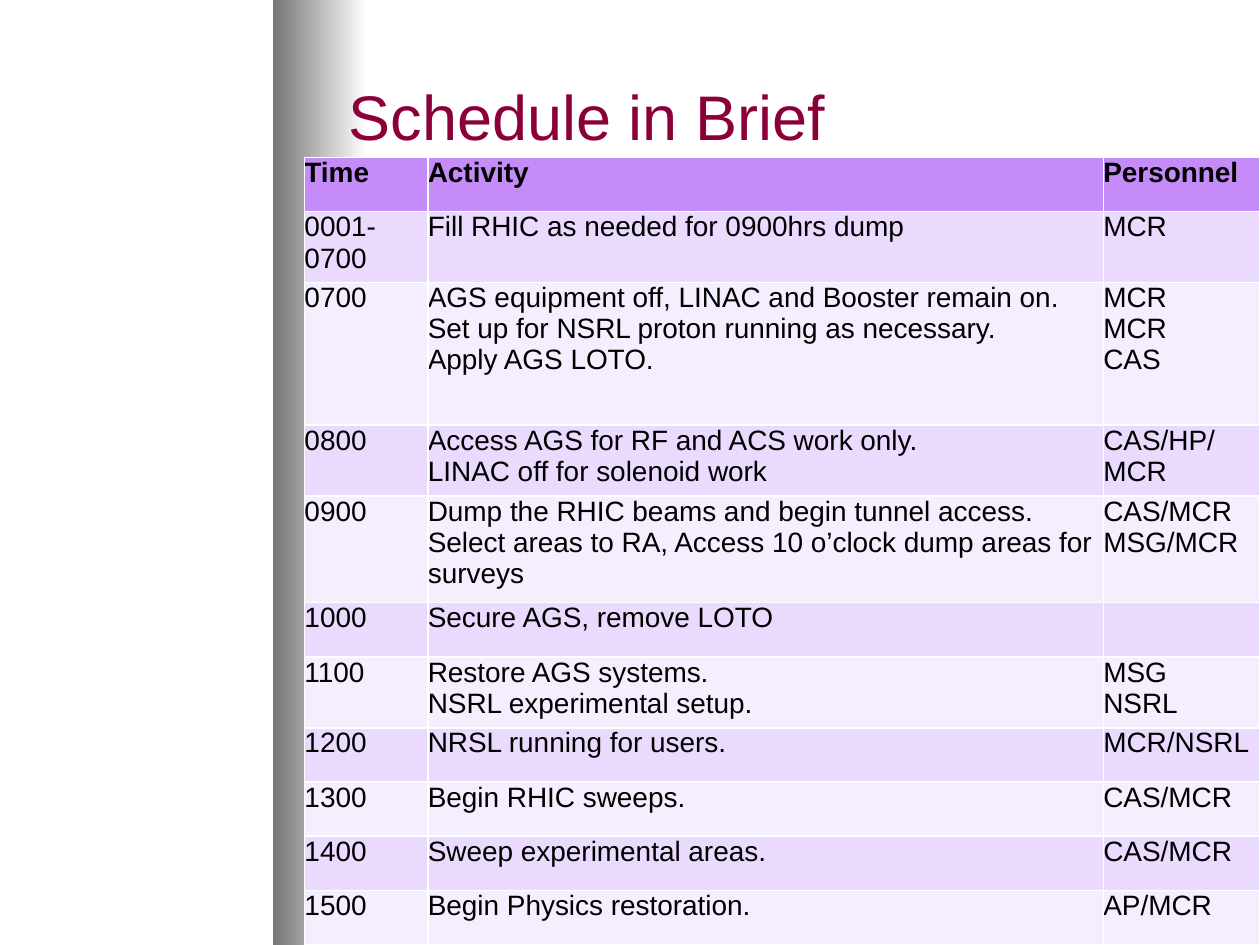
from pptx import Presentation
from pptx.dml.color import RGBColor
from pptx.enum.shapes import MSO_SHAPE
from pptx.enum.text import MSO_ANCHOR, MSO_AUTO_SIZE, PP_ALIGN
from pptx.util import Pt

RECT = MSO_SHAPE.RECTANGLE
MIDDLE = MSO_ANCHOR.MIDDLE
FIXED = MSO_AUTO_SIZE.NONE
LEFT = PP_ALIGN.LEFT

COLORS = {
    "title": "8C0039",
    "text": "000000",
    "head": "C58BF9",
    "dark": "EADAFD",
    "light": "F5EEFE",
    "shade": "767676",
    "white": "FFFFFF",
}

COLS = [70.5, 386, 89.3]

# Row height in points, then time, activity and personnel
ROWS = [
    (31, "Time", "Activity", "Personnel"),
    (40.5, "0001-0700", "Fill RHIC as needed for 0900hrs dump", "MCR"),
    (81.5, "0700",
     "AGS equipment off, LINAC and Booster remain on.\n"
     "Set up for NSRL proton running as necessary.\n"
     "Apply AGS LOTO.",
     "MCR\nMCR\nCAS"),
    (40.5, "0800",
     "Access AGS for RF and ACS work only.\nLINAC off for solenoid work",
     "CAS/HP/MCR"),
    (61, "0900",
     "Dump the RHIC beams and begin tunnel access.\n"
     "Select areas to RA, Access 10 o’clock dump areas for surveys",
     "CAS/MCR MSG/MCR"),
    (31, "1000", "Secure AGS, remove LOTO", ""),
    (40.5, "1100", "Restore AGS systems.\nNSRL experimental setup.", "MSG\nNSRL"),
    (31, "1200", "NRSL running for users.", "MCR/NSRL"),
    (31, "1300", "Begin RHIC sweeps.", "CAS/MCR"),
    (31, "1400", "Sweep experimental areas.", "CAS/MCR"),
    (31, "1500", "Begin Physics restoration.", "AP/MCR"),
]


def rgb(name):
    return RGBColor.from_string(COLORS[name])


def apply(target, values):
    for key, value in values.items():
        setattr(target, key, value)


class Deck:
    def __init__(self, font):
        self.font = font
        self.prs = Presentation()
        apply(self.prs, {"slide_width": Pt(720), "slide_height": Pt(540)})
        self.slide = self.prs.slides.add_slide(self.prs.slide_layouts[5])

    def label(self, frame, text, size, color, bold=False):
        frame.text = text
        for par in frame.paragraphs:
            par.alignment = LEFT
            for run in par.runs:
                apply(run.font, {"name": self.font, "size": Pt(size), "bold": bold})
                run.font.color.rgb = rgb(color)

    def title(self, text, x, y, w, h):
        shape = self.slide.shapes.title
        apply(shape, {"left": Pt(x), "top": Pt(y), "width": Pt(w), "height": Pt(h)})
        frame = shape.text_frame
        apply(frame, {"vertical_anchor": MIDDLE, "word_wrap": True, "auto_size": FIXED})
        self.label(frame, text, 36, "title")

    def band(self, x, y, w, h, start, end):
        """Add a left-to-right gradient strip behind the title."""
        shape = self.slide.shapes.add_shape(RECT, Pt(x), Pt(y), Pt(w), Pt(h))
        shape.shadow.inherit = False
        shape.line.fill.background()
        shape.fill.gradient()
        shape.fill.gradient_angle = 0
        for stop, color in zip(shape.fill.gradient_stops, (start, end)):
            stop.color.rgb = rgb(color)
        self.slide.shapes.title._element.addprevious(shape._element)

    def table(self, x, y, cols, rows):
        width, height = sum(cols), sum(row[0] for row in rows)
        grid = self.slide.shapes.add_table(
            len(rows), len(cols), Pt(x), Pt(y), Pt(width), Pt(height)).table
        for col, size in zip(grid.columns, cols):
            col.width = Pt(size)
        sides = ("margin_left", "margin_top", "margin_right", "margin_bottom")
        for i, (tall, *texts) in enumerate(rows):
            grid.rows[i].height = Pt(tall)
            fill = "head" if i == 0 else ("light", "dark")[i % 2]
            for cell, text in zip(grid.rows[i].cells, texts):
                apply(cell, dict.fromkeys(sides, 0))
                cell.fill.solid()
                cell.fill.fore_color.rgb = rgb(fill)
                self.label(cell.text_frame, text, 16, "text", i == 0)


def main():
    deck = Deck("Arial")
    deck.band(156, 0, 54, 540, "shade", "white")
    deck.title("Schedule in Brief", 192, 18, 504, 96)
    deck.table(174, 90, COLS, ROWS)
    deck.prs.save("out.pptx")


if __name__ == "__main__":
    main()
